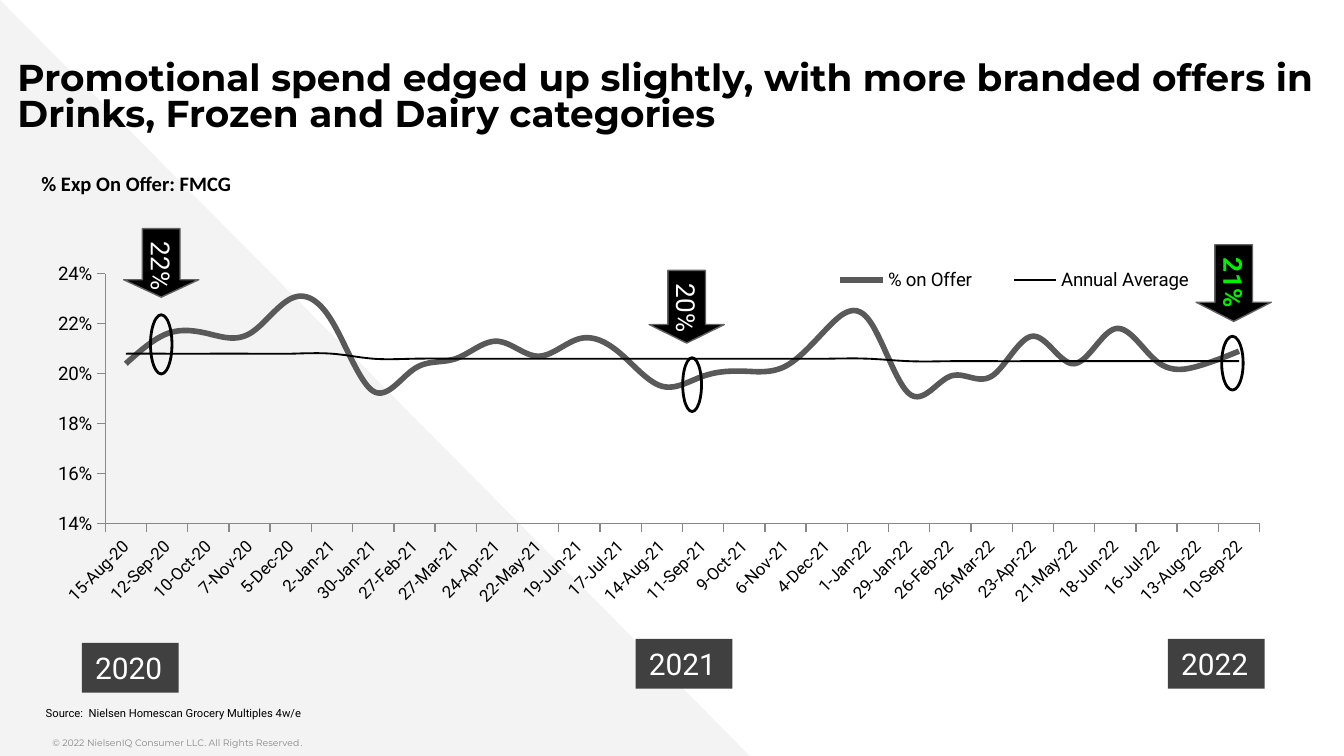
from dataclasses import dataclass

from lxml import etree
from pptx import Presentation
from pptx.chart.data import CategoryChartData
from pptx.dml.color import RGBColor
from pptx.enum import chart as charts, shapes, text
from pptx.oxml import parse_xml
from pptx.oxml.ns import nsdecls, qn
from pptx.util import Inches, Pt

BLACK = RGBColor(0x00, 0x00, 0x00)
WHITE = RGBColor(0xFF, 0xFF, 0xFF)
PALE = RGBColor(0xF3, 0xF3, 0xF3)
DARK = RGBColor(0x40, 0x40, 0x40)
SLATE = RGBColor(0x59, 0x59, 0x59)
EDGE = RGBColor(0x61, 0x63, 0x65)
GREY = RGBColor(0x88, 0x88, 0x88)
GREEN = RGBColor(0x00, 0xF0, 0x00)
WIDE = Inches(10)
HIGH = WIDE * 9 // 16


@dataclass
class Box:
    """A place on the slide, in percent of its width and height."""
    x: float
    y: float
    w: float
    h: float

    def place(self) -> tuple:
        return (int(WIDE * self.x / 100), int(HIGH * self.y / 100),
                int(WIDE * self.w / 100), int(HIGH * self.h / 100))


@dataclass
class Look:
    size: float
    face: str = "Roboto"
    color: RGBColor = BLACK
    bold: bool = False


@dataclass
class Mark:
    """An arrow with its share, and the ring it points at."""
    label: str
    arrow: Box
    ring: Box
    look: Look


@dataclass
class Trend:
    name: str
    vals: list
    color: RGBColor
    width: float


def style(font, look: Look) -> None:
    font.size, font.name, font.bold = Pt(look.size), look.face, look.bold
    font.color.rgb = look.color


def add_run(para, words: str, look: Look) -> None:
    run = para.add_run()
    run.text = words
    style(run.font, look)


def add_form(slide, kind, box: Box, fill=None, edge=None, width=0.75):
    form = slide.shapes.add_shape(kind, *box.place())
    form.shadow.inherit = False
    if fill is None:
        form.fill.background()
    else:
        form.fill.solid()
        form.fill.fore_color.rgb = fill
    if edge is None:
        form.line.fill.background()
    else:
        form.line.color.rgb = edge
        form.line.width = Pt(width)
    return form


def set_frame(frame, side=0.0, top=0.0, wrap=True):
    frame.word_wrap = wrap
    frame.auto_size = text.MSO_AUTO_SIZE.NONE
    frame.vertical_anchor = text.MSO_ANCHOR.TOP
    frame.margin_left = frame.margin_right = Inches(side)
    frame.margin_top = frame.margin_bottom = Inches(top)
    para = frame.paragraphs[0]
    para.alignment = text.PP_ALIGN.LEFT
    return para


def fill_holder(holder, box: Box, words: str, look: Look):
    holder.left, holder.top, holder.width, holder.height = box.place()
    para = set_frame(holder.text_frame, top=0.1)
    para.space_before = Pt(0)
    add_run(para, words, look)
    return para


def add_mark(slide, mark: Mark) -> None:
    add_form(slide, shapes.MSO_SHAPE.OVAL, mark.ring, edge=BLACK, width=1.5)
    arrow = add_form(slide, shapes.MSO_SHAPE.DOWN_ARROW, mark.arrow, BLACK, EDGE)
    arrow.adjustments[0], arrow.adjustments[1] = 0.5, 0.255
    para = set_frame(arrow.text_frame, 0.1, 0.05, wrap=False)
    arrow.text_frame.vertical_anchor = text.MSO_ANCHOR.MIDDLE
    arrow.text_frame._txBody.bodyPr.set("vert", "eaVert")
    para.alignment = text.PP_ALIGN.CENTER
    add_run(para, mark.label, mark.look)


def add_year(slide, year: str, x: float, y: float) -> None:
    tag = add_form(slide, shapes.MSO_SHAPE.RECTANGLE, Box(x, y, 7.2, 6.58), DARK)
    para = set_frame(tag.text_frame, 0.1, 0.05, wrap=False)
    add_run(para, year, Look(16, color=WHITE))


def set_layout(part, after: str, inner: bool, **shares: float) -> None:
    """Fix the place of a chart part, in shares of the chart."""
    for old in part.findall(qn("c:layout")):
        part.remove(old)
    node = parse_xml(f"<c:layout {nsdecls('c')}><c:manualLayout/></c:layout>")
    rules = {"layoutTarget": "inner"} if inner else {}
    rules |= {"xMode": "edge", "yMode": "edge"} | shares
    for key, val in rules.items():
        etree.SubElement(node[0], qn(f"c:{key}")).set("val", str(val))
    if after:
        part.find(qn(after)).addnext(node)
    else:
        part.insert(0, node)


def add_trends(slide, box: Box, trends: list) -> None:
    data = CategoryChartData(number_format="0%")
    data.categories = range(44058, 44058 + 28 * 28, 28)  # four-week date serials
    data.categories.number_format = "d\\-mmm\\-yy"
    for trend in trends:
        data.add_series(trend.name, trend.vals)
    chart = slide.shapes.add_chart(
        charts.XL_CHART_TYPE.LINE, *box.place(), data).chart
    chart.has_title = False
    style(chart.font, Look(18, "Arial"))
    for line, trend in zip(chart.plots[0].series, trends):
        line.smooth = True
        line.marker.style = charts.XL_MARKER_STYLE.NONE
        line.format.line.color.rgb = trend.color
        line.format.line.width = Pt(trend.width)

    # Axes: one evenly spaced label for each period
    dates, rates = chart.category_axis, chart.value_axis
    for axis, size in ((dates, 9), (rates, 10)):
        axis.has_major_gridlines = False
        axis.major_tick_mark = charts.XL_TICK_MARK.OUTSIDE
        axis.format.line.color.rgb = GREY
        style(axis.tick_labels.font, Look(size))
    dates.tick_label_position = charts.XL_TICK_LABEL_POSITION.LOW
    dates.tick_labels.number_format = "d\\-mmm\\-yy"
    dates.tick_labels.number_format_is_linked = False
    dates._element.find(qn("c:auto")).set("val", "0")
    dates._element.find(qn("c:txPr")).find(qn("a:bodyPr")).set("rot", "-2700000")
    rates.minimum_scale, rates.maximum_scale, rates.major_unit = 0.14, 0.24, 0.02
    rates.tick_labels.number_format = "0%"
    rates.tick_labels.number_format_is_linked = False

    # Legend and plot area
    chart.has_legend = True
    chart.legend.position = charts.XL_LEGEND_POSITION.RIGHT
    chart.legend.include_in_layout = False
    style(chart.legend.font, Look(10))
    set_layout(chart.legend._element, "c:legendPos", False, x=0.6, y=0.01, w=0.33, h=0.11)
    plot = chart._chartSpace.chart.plotArea
    set_layout(plot, "", True, x=0.049, y=0.051, w=0.909, h=0.572)


TRENDS = [
    Trend("% on Offer", [
        0.204, 0.216, 0.216, 0.216, 0.23, 0.221, 0.193, 0.202, 0.206, 0.213,
        0.207, 0.214, 0.208, 0.195, 0.199, 0.201, 0.203, 0.218, 0.222, 0.192,
        0.199, 0.199, 0.215, 0.204, 0.218, 0.205, 0.203, 0.209], SLATE, 3),
    Trend("Annual Average", [0.208] * 6 + [0.206] * 13 + [0.205] * 9, BLACK, 1),
]
MARKS = [
    Mark("22%", Box(9.2, 30.25, 5.6, 9.07), Box(11.2, 41.64, 1.6, 7.83),
         Look(14, color=WHITE)),
    Mark("20%", Box(48.3, 35.77, 5.6, 9.61), Box(50.8, 47.33, 1.4, 7.12),
         Look(14, color=WHITE)),
    Mark("21%", Box(89, 32.38, 5.6, 10.14), Box(90.9, 44.48, 1.6, 7.12),
         Look(14, color=GREEN, bold=True)),
]
YEARS = [("2020", 6.1, 85.05), ("2021", 47.3, 84.52), ("2022", 86.9, 84.52)]


def main() -> None:
    deck = Presentation()
    deck.slide_width, deck.slide_height = WIDE, HIGH
    slide = deck.slides.add_slide(deck.slide_layouts[1])

    # Backdrop, behind the placeholders
    wedge = add_form(slide, shapes.MSO_SHAPE.RIGHT_TRIANGLE, Box(0, 0, 55.9, 100.2), PALE)
    slide.shapes._spTree.insert(2, wedge._element)

    # Title and source line
    title = fill_holder(
        slide.shapes.title, Box(1.3, 6.58, 99.1, 12.28),
        "Promotional spend edged up slightly, with more branded offers in "
        "Drinks, Frozen and Dairy categories", Look(20, "Montserrat", bold=True))
    title.line_spacing = 0.8
    source = fill_holder(
        slide.placeholders[1], Box(2.2, 91.64, 50, 10.14),
        "Source:  Nielsen Homescan Grocery Multiples 4w/e", Look(6))
    props = source._p.get_or_add_pPr()
    props.set("marL", str(Inches(0.12)))
    props.set("indent", "0")
    etree.SubElement(props, qn("a:buNone"))

    # Chart with its heading, marks and years
    add_trends(slide, Box(3.2, 33.27, 94.5, 57.83), TRENDS)
    head = slide.shapes.add_textbox(*Box(2.1, 21.71, 16.7, 5.16).place())
    add_run(set_frame(head.text_frame, 0.1, 0.05, wrap=False),
            "% Exp On Offer: FMCG", Look(11, "Calibri", bold=True))
    for mark in MARKS:
        add_mark(slide, mark)
    for year in YEARS:
        add_year(slide, *year)

    # Copyright line
    foot = slide.shapes.add_textbox(*Box(3.9, 96.62, 55.4, 3.56).place())
    para = set_frame(foot.text_frame, top=0.05)
    add_run(para, "© 2022 NielsenIQ Consumer LLC. All Rights Reserved",
            Look(5, "Montserrat", GREY))
    add_run(para, ".", Look(5, color=GREY))
    deck.save("out.pptx")


if __name__ == "__main__":
    main()
